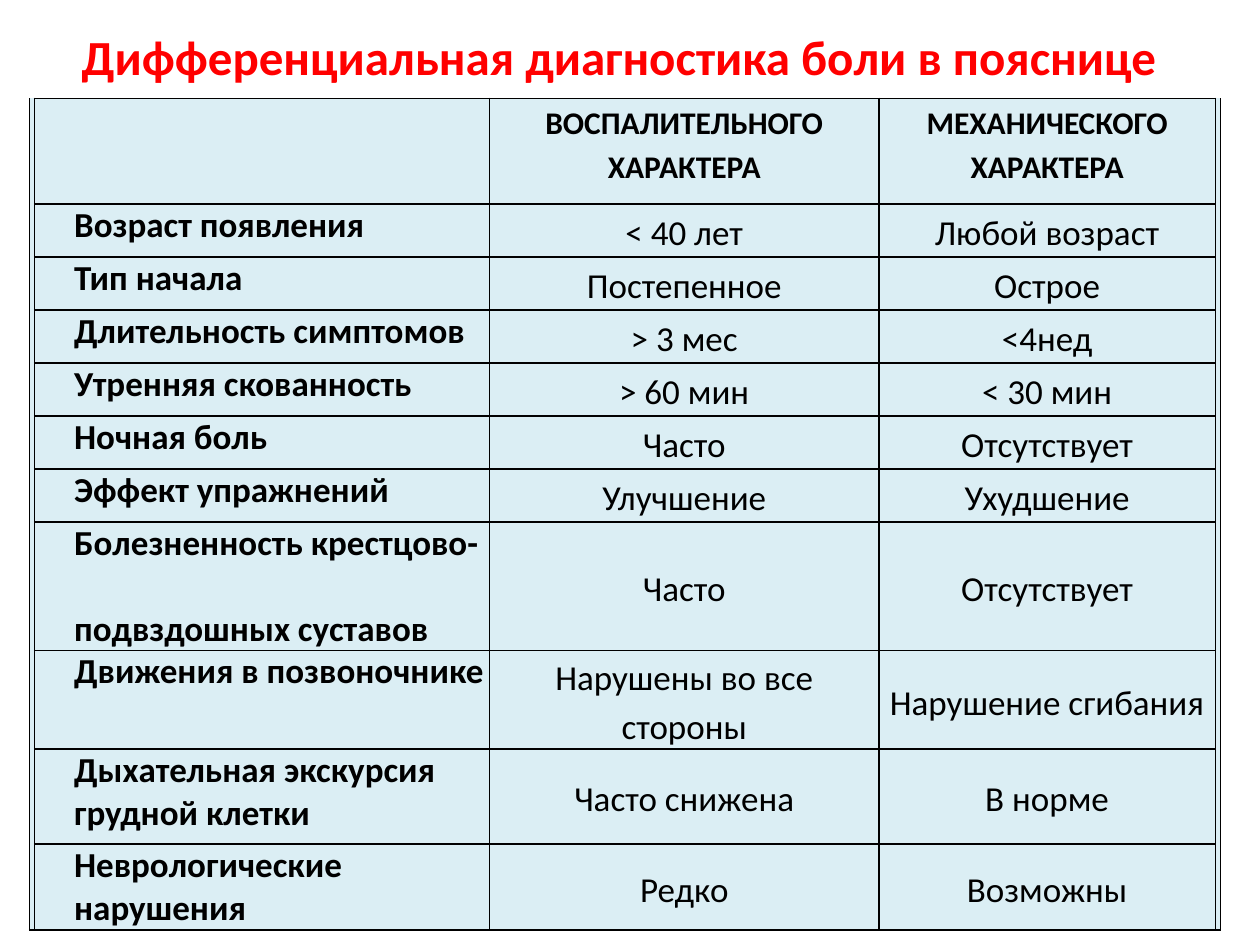
"""Build a slide comparing inflammatory and mechanical lower back pain."""
from dataclasses import dataclass

from lxml import etree
from pptx import Presentation
from pptx.dml.color import RGBColor
from pptx.enum.text import MSO_ANCHOR, MSO_AUTO_SIZE, PP_ALIGN
from pptx.oxml.ns import qn
from pptx.util import Pt

TOP, MIDDLE = MSO_ANCHOR.TOP, MSO_ANCHOR.MIDDLE
LEFT, CENTER = PP_ALIGN.LEFT, PP_ALIGN.CENTER
NO_AUTOFIT = MSO_AUTO_SIZE.NONE
TITLE_ONLY = 5


@dataclass(frozen=True)
class Theme:
    """Hold the colours, font and sizes of the slide."""

    font: str = "Calibri"
    title_color: str = "FF0000"
    text_color: str = "000000"
    border_color: str = "000000"
    cell_color: str = "DBEEF4"
    title_size: float = 28
    header_size: float = 18
    body_size: float = 20
    border_width: float = 1
    line_spacing: float = 1.15
    label_indent: float = 22.6


TITLE = "Дифференциальная диагностика боли в пояснице"
HEADERS = ["", "ВОСПАЛИТЕЛЬНОГО ХАРАКТЕРА", "МЕХАНИЧЕСКОГО ХАРАКТЕРА"]
FEATURES = [
    (["Возраст появления"], "< 40 лет", "Любой возраст"),
    (["Тип начала"], "Постепенное", "Острое"),
    (["Длительность симптомов"], "> 3 мес", "<4нед"),
    (["Утренняя скованность"], "> 60 мин", "< 30 мин"),
    (["Ночная боль"], "Часто", "Отсутствует"),
    (["Эффект упражнений"], "Улучшение", "Ухудшение"),
    (["Болезненность крестцово-", "подвздошных суставов"], "Часто", "Отсутствует"),
    (["Движения в позвоночнике"], "Нарушены во все стороны", "Нарушение сгибания"),
    (["Дыхательная экскурсия", "грудной клетки"], "Часто снижена", "В норме"),
    (["Неврологические", "нарушения"], "Редко", "Возможны"),
]
EDGE_WIDTH = 2.9
COLUMN_WIDTHS = [EDGE_WIDTH, 260, 222.5, 192.2, EDGE_WIDTH]
ROW_HEIGHTS = [60.5] + [30.3] * 6 + [33.2, 38.9, 55.2, 54.2, 47.8]
JOINT_ROW = 7


class SlideBuilder:
    """Add styled elements to the current slide."""

    def __init__(self, slide, theme):
        self.slide = slide
        self.theme = theme

    def style(self, paragraph, size, color, bold, alignment):
        """Format one paragraph."""
        paragraph.alignment = alignment
        font = paragraph.font
        font.name, font.size, font.bold = self.theme.font, Pt(size), bold
        font.color.rgb = RGBColor.from_string(color)

    def title(self, text, left, top, width, height):
        """Place the title."""
        shape = self.slide.shapes.title
        shape.left, shape.top = Pt(left), Pt(top)
        shape.width, shape.height = Pt(width), Pt(height)
        frame = shape.text_frame
        frame.text = text
        frame.auto_size, frame.vertical_anchor = NO_AUTOFIT, TOP
        self.style(frame.paragraphs[0], self.theme.title_size,
                   self.theme.title_color, True, CENTER)

    def table(self, left, top, column_widths, row_heights):
        """Add a filled and bordered table with narrow edge columns."""
        table = self.slide.shapes.add_table(
            len(row_heights), len(column_widths), Pt(left), Pt(top),
            Pt(sum(column_widths)), Pt(sum(row_heights))).table
        table.first_row = table.horz_banding = False
        for column, width in zip(table.columns, column_widths):
            column.width = Pt(width)
        last_row, last_column = len(row_heights) - 1, len(column_widths) - 1
        for row_index, height in enumerate(row_heights):
            table.rows[row_index].height = Pt(height)
            for column_index in range(len(column_widths)):
                sides = "LRTB"
                if column_index in (0, last_column):
                    sides = "LRB" if row_index == last_row else "LR"
                self.cell(table.cell(row_index, column_index), sides)
        return table

    def cell(self, cell, sides):
        """Draw the borders on the given sides and fill the cell."""
        cell.margin_left = cell.margin_right = Pt(0)
        cell.margin_top = cell.margin_bottom = Pt(0)
        properties = cell._tc.get_or_add_tcPr()
        for side in "LRTB":
            line = etree.SubElement(properties, qn(f"a:ln{side}"),
                                    w=str(Pt(self.theme.border_width)))
            if side in sides:
                fill = etree.SubElement(line, qn("a:solidFill"))
                etree.SubElement(fill, qn("a:srgbClr"), val=self.theme.border_color)
            else:
                etree.SubElement(line, qn("a:noFill"))
        cell.fill.solid()
        cell.fill.fore_color.rgb = RGBColor.from_string(self.theme.cell_color)

    def header(self, cell, text):
        """Write a column heading."""
        self.centered(cell, text, self.theme.header_size, True, TOP)

    def value(self, cell, text):
        """Write a feature value."""
        self.centered(cell, text, self.theme.body_size, False, MIDDLE)

    def centered(self, cell, text, size, bold, anchor):
        """Write centred text in a cell."""
        cell.text = text
        cell.vertical_anchor = anchor
        paragraph = cell.text_frame.paragraphs[0]
        paragraph.line_spacing = self.theme.line_spacing
        self.style(paragraph, size, self.theme.text_color, bold, CENTER)

    def label(self, cell, lines):
        """Write an indented feature name."""
        cell.text = "\n".join(lines)
        cell.margin_left = Pt(self.theme.label_indent)
        for paragraph in cell.text_frame.paragraphs:
            self.style(paragraph, self.theme.body_size,
                       self.theme.text_color, True, LEFT)


def main():
    """Build and save the presentation."""
    presentation = Presentation()
    presentation.slide_width, presentation.slide_height = Pt(720), Pt(540)
    slide = presentation.slides.add_slide(presentation.slide_layouts[TITLE_ONLY])
    builder = SlideBuilder(slide, Theme())
    builder.title(TITLE, 22.3, 11.5, 662.4, 63.4)

    table = builder.table(16.9, 56.2, COLUMN_WIDTHS, ROW_HEIGHTS)
    for column_index, text in enumerate(HEADERS, start=1):
        builder.header(table.cell(0, column_index), text)
        table.cell(JOINT_ROW, column_index).merge(
            table.cell(JOINT_ROW + 1, column_index))

    feature_rows = [row for row in range(1, len(ROW_HEIGHTS)) if row != JOINT_ROW + 1]
    for row, (lines, inflammatory, mechanical) in zip(feature_rows, FEATURES):
        builder.label(table.cell(row, 1), lines)
        builder.value(table.cell(row, 2), inflammatory)
        builder.value(table.cell(row, 3), mechanical)
    joint_paragraphs = table.cell(JOINT_ROW, 1).text_frame.paragraphs
    joint_paragraphs[1].space_before = Pt(24.4)

    presentation.save("out.pptx")


if __name__ == "__main__":
    main()
